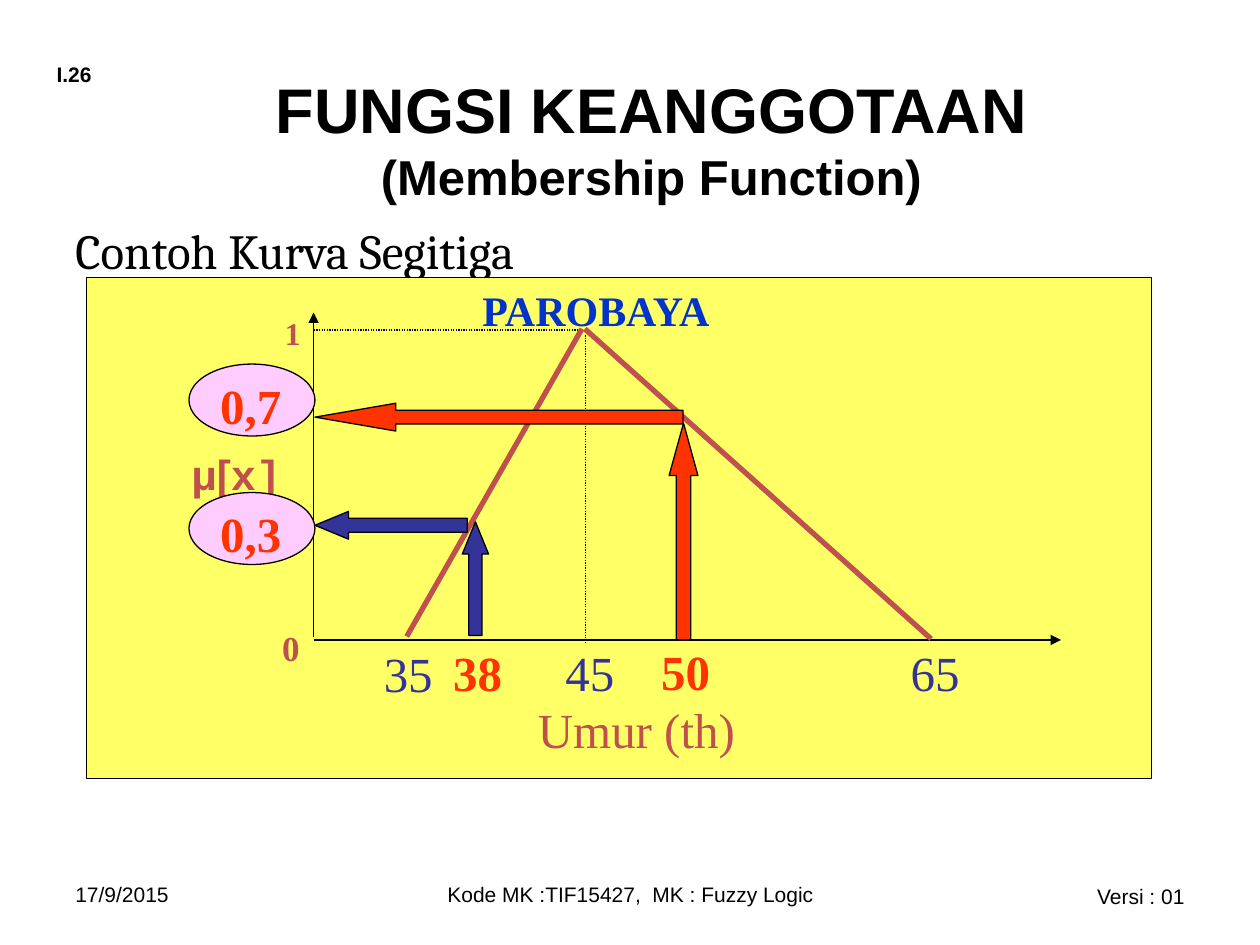
"""Build a slide showing a triangular fuzzy membership function for age."""
from lxml import etree
from pptx import Presentation
from pptx.dml.color import RGBColor
from pptx.enum.dml import MSO_LINE
from pptx.enum.shapes import MSO_CONNECTOR, MSO_SHAPE as SHAPE
from pptx.enum.text import MSO_ANCHOR, MSO_AUTO_SIZE, PP_ALIGN as ALIGN
from pptx.oxml.ns import qn
from pptx.util import Cm, Pt

COLORS = {
    "black": "000000", "yellow": "FFFF66", "pink": "FFCCFF", "brick": "C0504D",
    "navy": "333399", "blue": "0033CC", "red": "FF3300",
}
SERIF = "Times New Roman"


def format_run(run, size, font, color, bold):
    run.font.size = Pt(size)
    run.font.name = font
    run.font.bold = bold
    run.font.color.rgb = RGBColor.from_string(COLORS[color])


def add_label(text, box, size, font=SERIF, color="black", bold=False, align=ALIGN.CENTER):
    text_frame = slide.shapes.add_textbox(*map(Cm, box)).text_frame
    text_frame.word_wrap = True
    text_frame.text = text
    paragraph = text_frame.paragraphs[0]
    paragraph.alignment = align
    format_run(paragraph.runs[0], size, font, color, bold)
    return paragraph


presentation = Presentation()
presentation.slide_width, presentation.slide_height = Cm(25.4), Cm(19.05)
slide = presentation.slides.add_slide(presentation.slide_layouts[5])

title = slide.shapes.title
title.left, title.top, title.width, title.height = map(Cm, (1.7, 1.19, 22.86, 3.18))
title.text_frame.text = "FUNGSI KEANGGOTAAN\n(Membership Function)"
title.text_frame.auto_size = MSO_AUTO_SIZE.NONE
title.text_frame.vertical_anchor = MSO_ANCHOR.MIDDLE
for paragraph, size in zip(title.text_frame.paragraphs, (36, 28)):
    paragraph.alignment = ALIGN.CENTER
    format_run(paragraph.runs[0], size, "Arial", "black", True)

add_label("I.26", (0.89, 1.12, 4.6, 0.76), 12, "Arial", bold=True, align=ALIGN.LEFT)
add_label("Versi : 01", (18.21, 17.68, 5.92, 0.76), 12, "Arial", align=ALIGN.RIGHT)
add_label("17/9/2015", (1.27, 17.65, 5.92, 1.02), 12, "Arial", align=ALIGN.LEFT)
add_label("Kode MK :TIF15427,  MK : Fuzzy Logic", (8.69, 17.65, 8.05, 1.02), 12, "Arial")
add_label("Contoh Kurva Segitiga", (1.27, 4.32, 22.86, 1.27), 28, "Cambria", align=ALIGN.LEFT)

panel = (SHAPE.RECTANGLE, (1.75, 5.59, 21.46, 10.11), "yellow", None)
arrows = [
    (SHAPE.UP_ARROW, (9.32, 10.52, 0.53, 2.29), "navy", 1.23),
    (SHAPE.LEFT_ARROW, (6.35, 10.31, 3.07, 0.56), "navy", 1.21),
    (SHAPE.UP_ARROW, (13.49, 8.53, 0.58, 4.37), "red", 1.82),
    (SHAPE.LEFT_ARROW, (6.35, 8.13, 7.42, 0.56), "red", 2.91),
]
degrees = [("0,3", 9.93), ("0,7", 7.34)]
ovals = [(SHAPE.OVAL, (3.81, top, 2.54, 1.45), "pink", None) for _, top in degrees]
lines = [
    ((6.32, 12.9), (21.39, 12.9), "axis"),
    ((6.32, 12.85), (6.32, 6.3), "axis"),
    ((11.81, 6.76), (11.81, 12.95), "guide"),
    ((11.76, 6.65), (6.32, 6.65), "guide"),
    ((11.73, 6.63), (8.2, 12.83), "curve"),
    ((11.79, 6.63), (18.77, 12.88), "curve"),
]

for kind, box, color, head in [panel, *arrows, *ovals]:
    shape = slide.shapes.add_shape(kind, *map(Cm, box))
    shape.shadow.inherit = False
    shape.fill.solid()
    shape.fill.fore_color.rgb = RGBColor.from_string(COLORS[color])
    shape.line.color.rgb = RGBColor.from_string(COLORS["black"])
    shape.line.width = Pt(0.75)
    if head:
        shape.adjustments[0], shape.adjustments[1] = 0.5, head
    if kind != SHAPE.RECTANGLE:
        continue

    for start, end, role in lines:
        connector = slide.shapes.add_connector(
            MSO_CONNECTOR.STRAIGHT, *map(Cm, start + end))
        is_curve = role == "curve"
        connector.line.color.rgb = RGBColor.from_string(
            COLORS["brick" if is_curve else "black"])
        connector.line.width = Pt(3 if is_curve else 0.75)
        if role == "guide":
            connector.line.dash_style = MSO_LINE.ROUND_DOT
        if role == "axis":
            etree.SubElement(connector.line._get_or_add_ln(), qn("a:tailEnd"), type="triangle")
        etree.SubElement(connector._element.spPr, qn("a:effectLst"))

    axis_name = add_label("μ[", (3.1, 8.92, 3.33, 1.22), 24, "Arial", "brick", True)
    argument = axis_name.add_run()
    argument.text = "x]"
    format_run(argument, 24, "Courier New", "brick", True)

add_label("1", (4.85, 6.2, 2.11, 1.12), 18, color="brick", bold=True)
add_label("0", (5.05, 12.5, 1.63, 1.35), 20, color="brick", bold=True)
add_label("PAROBAYA", (8.56, 5.61, 6.91, 1.09), 24, color="blue", bold=True)
add_label("Umur (th)", (9.68, 13.97, 6.3, 1.12), 28, color="brick")

for age, center, top, color in [
    ("35", 8.23, 12.85, "navy"), ("38", 9.63, 12.83, "red"), ("45", 11.89, 12.83, "navy"),
    ("50", 13.82, 12.8, "red"), ("65", 18.85, 12.83, "navy"),
]:
    add_label(age, (center - 1.27, top, 2.54, 1.09), 28, color=color, bold=color == "red")

for degree, top in degrees:
    add_label(degree, (3.76, top + 0.1, 2.59, 1.09), 28, color="red", bold=True)

presentation.save("out.pptx")
